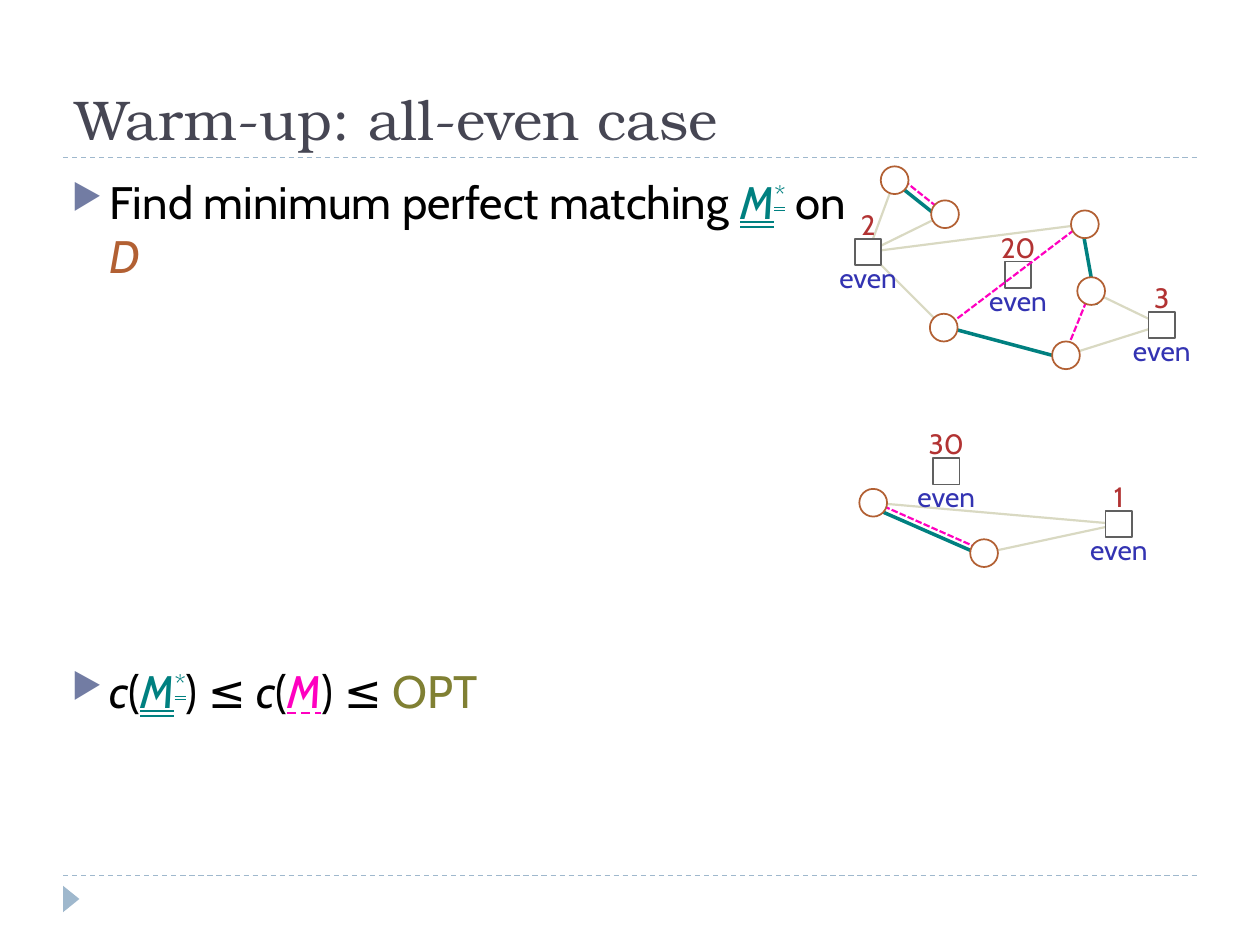
from pptx import Presentation
from pptx.dml.color import RGBColor
from pptx.enum.dml import MSO_LINE
from pptx.enum.shapes import MSO_CONNECTOR, MSO_SHAPE
from pptx.enum.text import MSO_ANCHOR, MSO_UNDERLINE, PP_ALIGN
from pptx.oxml.ns import qn
from pptx.util import Inches, Pt
from lxml import etree

WHITE = RGBColor(0xFF, 0xFF, 0xFF)
BLACK = RGBColor(0x00, 0x00, 0x00)
SLATE = RGBColor(0x46, 0x46, 0x53)
RULE = RGBColor(0x9F, 0xB8, 0xCD)
BULLET = RGBColor(0x72, 0x7C, 0xA3)
TREE = RGBColor(0xD9, 0xD9, 0xC2)
TEAL = RGBColor(0x00, 0x80, 0x80)
PINK = RGBColor(0xFF, 0x00, 0xC0)
BROWN = RGBColor(0xB2, 0x60, 0x33)
GREY = RGBColor(0x60, 0x60, 0x60)
RED = RGBColor(0xB2, 0x33, 0x33)
BLUE = RGBColor(0x33, 0x33, 0xB2)
OLIVE = RGBColor(0x80, 0x80, 0x33)

TITLE_FONT = "TeX Gyre Bonum"
BODY_FONT = "Cabin"
DOUBLE = MSO_UNDERLINE.DOUBLE_LINE
DASHED = MSO_UNDERLINE.DASH_LINE

# Graph nodes: centres in inches, relative to the graph's box
SQUARES = {"2": (0.39, 0.7), "20": (1.58, 0.88), "3": (2.72, 1.28),
           "30": (1.01, 2.44), "1": (2.38, 2.86)}
CIRCLES = {"a": (0.6, 0.13), "b": (1, 0.4), "c": (2.11, 0.48), "d": (2.16, 1.01),
           "e": (0.99, 1.3), "f": (1.96, 1.52), "g": (0.43, 2.69), "h": (1.31, 3.09)}
TREE_EDGES = [("2", "a"), ("2", "c"), ("3", "d"), ("f", "3"),
              ("2", "b"), ("e", "2"), ("1", "g"), ("1", "h")]
# Matching edges run beside each other, so they have their own end points
MINIMUM_MATCHING = [(2.07, 0.4, 2.2, 1.12), (0.99, 1.29, 1.85, 1.52),
                    (0.43, 2.73, 1.32, 3.12), (0.58, 0.13, 1.02, 0.48)]
OTHER_MATCHING = [(0.45, 2.69, 1.33, 3.08), (2.2, 0.9, 1.92, 1.59),
                  (2.19, 0.4, 0.91, 1.37), (0.62, 0.09, 1.06, 0.44)]


def add_line(s, x1, y1, x2, y2, color, width, dash=None):
    ln = s.shapes.add_connector(MSO_CONNECTOR.STRAIGHT, Inches(x1), Inches(y1),
                                Inches(x2), Inches(y2))
    ln.line.color.rgb = color
    ln.line.width = Pt(width)
    if dash:
        ln.line.dash_style = dash
    etree.SubElement(ln._element.spPr, qn("a:effectLst"))


def add_shape(s, kind, cx, cy, w, h, fill, line=None):
    sp = s.shapes.add_shape(kind, Inches(cx - w / 2), Inches(cy - h / 2),
                            Inches(w), Inches(h))
    sp.shadow.inherit = False
    sp.fill.solid()
    sp.fill.fore_color.rgb = fill
    if line is None:
        sp.line.fill.background()
    else:
        sp.line.color.rgb = line
        sp.line.width = Pt(1)
    return sp


def add_box(s, x, y, w, h, wrap=True):
    tf = s.shapes.add_textbox(Inches(x), Inches(y), Inches(w), Inches(h)).text_frame
    tf.word_wrap = wrap
    return tf


def add_run(p, text, font, size, color):
    r = p.add_run()
    r.text = text
    r.font.name = font
    r.font.size = Pt(size)
    r.font.color.rgb = color
    return r


def add_frame(s):
    # Dashed rules and footer marker
    for y in (1.25, 6.95):
        add_line(s, 0.5, y, 9.5, y, RULE, 0.75, MSO_LINE.DASH)
    marker = add_shape(s, MSO_SHAPE.ISOSCELES_TRIANGLE, 0.565, 7.135, 0.21, 0.13, RULE)
    marker.rotation = 90


def add_title(s, x, y, w, h):
    tf = add_box(s, x, y, w, h)
    tf.vertical_anchor = MSO_ANCHOR.BOTTOM
    add_run(tf.paragraphs[0], "Warm-up: all-even case", TITLE_FONT, 32, SLATE)


def add_label(s, text, cx, y, w, color):
    p = add_box(s, cx - w / 2, y, w, 0.4, wrap=False).paragraphs[0]
    p.alignment = PP_ALIGN.CENTER
    add_run(p, text, BODY_FONT, 16, color)


def add_graph(s, x, y):
    nodes = {name: (x + cx, y + cy) for name, (cx, cy) in {**SQUARES, **CIRCLES}.items()}

    # Tree edges and minimum matching
    for start, end in TREE_EDGES:
        add_line(s, *nodes[start], *nodes[end], TREE, 1.25)
    for x1, y1, x2, y2 in MINIMUM_MATCHING:
        add_line(s, x + x1, y + y1, x + x2, y + y2, TEAL, 2)

    # Squares, then the dashed matching that crosses one of them
    for name in SQUARES:
        add_shape(s, MSO_SHAPE.RECTANGLE, *nodes[name], 0.21, 0.21, WHITE, GREY)
    for x1, y1, x2, y2 in OTHER_MATCHING:
        add_line(s, x + x1, y + y1, x + x2, y + y2, PINK, 1.25, MSO_LINE.SQUARE_DOT)
    for name in CIRCLES:
        add_shape(s, MSO_SHAPE.OVAL, *nodes[name], 0.22, 0.22, WHITE, BROWN)

    # Number above and parity below each square
    for name in SQUARES:
        cx, cy = nodes[name]
        add_label(s, name, cx, cy - 0.4, 0.56, RED)
        add_label(s, "even", cx, cy + 0.02, 0.76, BLUE)


def add_bullet(s, x, y, w, h, runs):
    """Each run is (text, colour, italic, underline, superscript)."""
    p = add_box(s, x, y, w, h).paragraphs[0]
    p.space_before = Pt(6)
    pPr = p._p.get_or_add_pPr()
    pPr.set("marL", str(Inches(0.3)))
    pPr.set("indent", str(-Inches(0.3)))
    bu_clr = etree.SubElement(pPr, qn("a:buClr"))
    etree.SubElement(bu_clr, qn("a:srgbClr"), val=str(BULLET))
    etree.SubElement(pPr, qn("a:buSzPct"), val="76000")
    etree.SubElement(pPr, qn("a:buChar"), char="▶")
    for text, color, italic, underline, superscript in runs:
        r = add_run(p, text, BODY_FONT, 26, color)
        r.font.italic = italic
        if underline:
            r.font.underline = underline
        if superscript:
            r.font._element.set("baseline", "30000")


def plain(text, color=BLACK):
    return (text, color, False, None, False)


def variable(text, color=BLACK, underline=None):
    return (text, color, True, underline, False)


def main():
    prs = Presentation()
    prs.slide_width, prs.slide_height = Inches(10), Inches(7.5)
    s = prs.slides.add_slide(prs.slide_layouts[6])

    m_star = [variable("M", TEAL, DOUBLE), ("*", TEAL, False, DOUBLE, True)]
    add_frame(s)
    add_title(s, 0.5, 0.17, 9, 1.08)
    add_graph(s, 6.5, 1.3)
    add_bullet(s, 0.47, 5.21, 8.87, 1.77, [
        variable("c"), plain("("), *m_star, plain(") ≤ "),
        variable("c"), plain("("), variable("M", PINK, DASHED), plain(") ≤ "),
        plain("OPT", OLIVE)])
    add_bullet(s, 0.47, 1.33, 6.45, 3.83, [
        plain("Find minimum perfect matching "), *m_star, plain(" on "),
        variable("D", BROWN)])
    prs.save("out.pptx")


if __name__ == "__main__":
    main()
